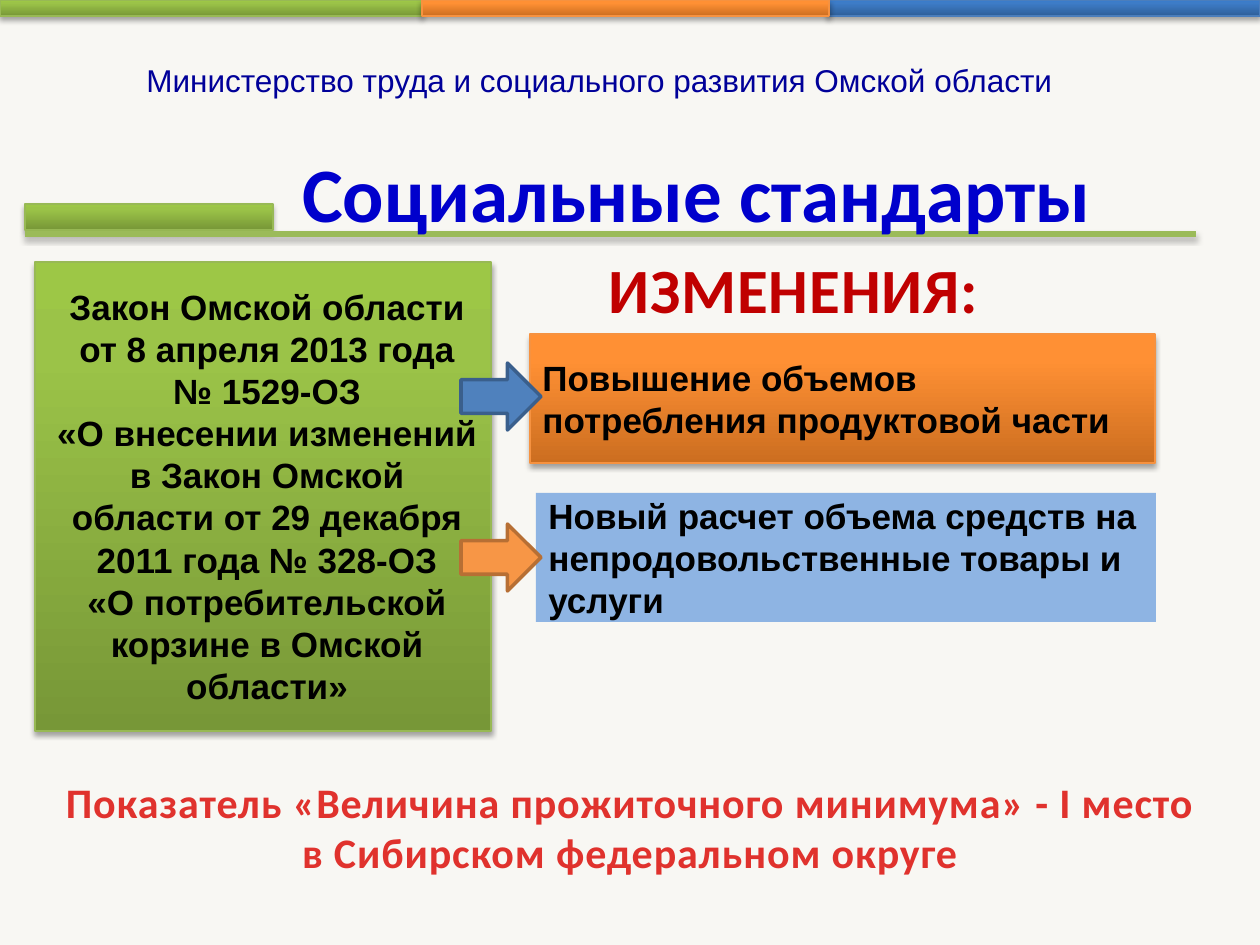
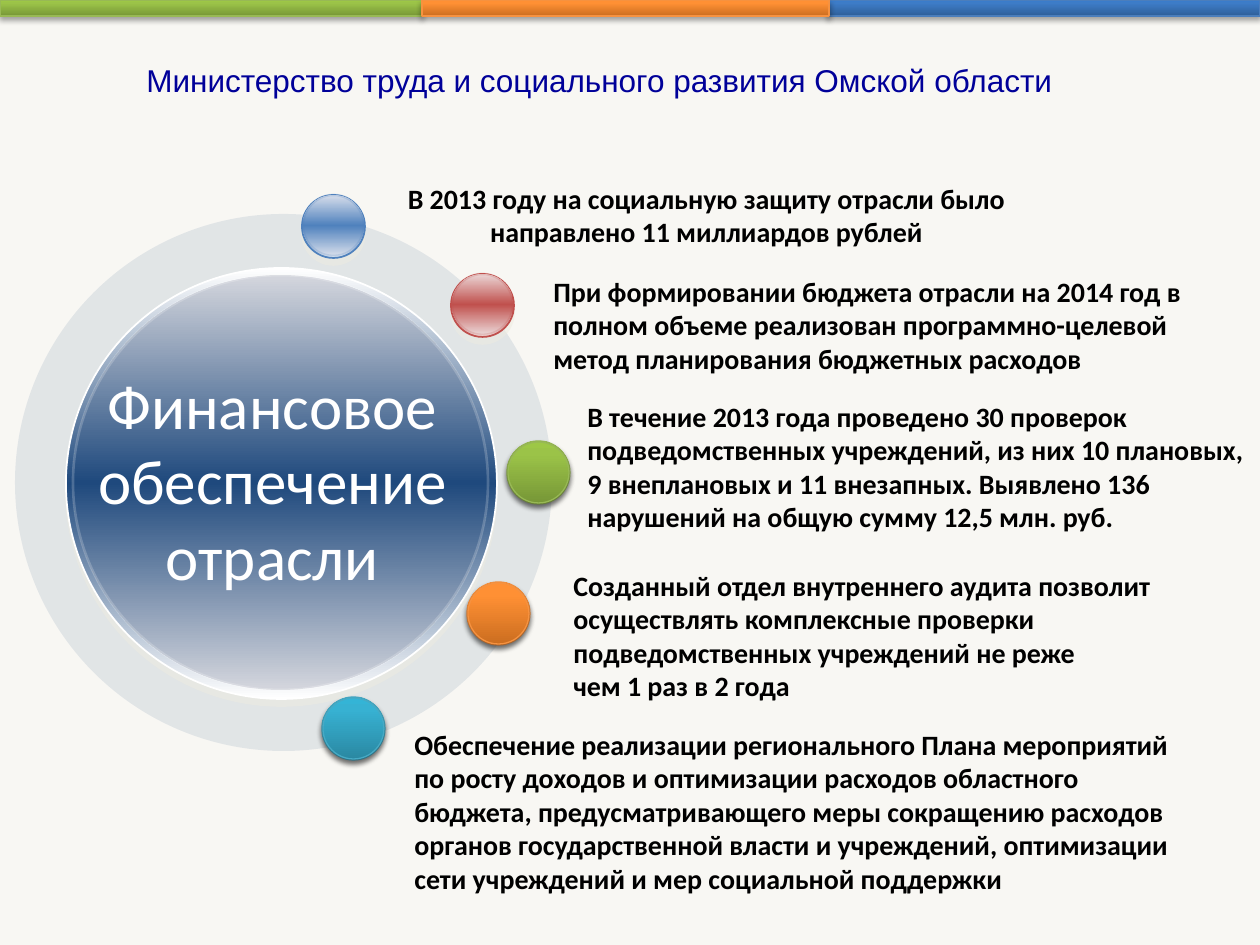
import lxml.etree
import pptx
import pptx.dml.color
import pptx.enum.shapes
import pptx.enum.text
import pptx.oxml.ns
import pptx.util

RGB = pptx.dml.color.RGBColor
SHAPE = pptx.enum.shapes.MSO_SHAPE
ALIGN = pptx.enum.text.PP_ALIGN
ANCHOR = pptx.enum.text.MSO_ANCHOR
qn = pptx.oxml.ns.qn

EMU_PER_PX = 914400 / 126
PAGE_W, PAGE_H = 1260, 945

PAPER = RGB(0xF8, 0xF7, 0xF3)
BLACK = RGB(0, 0, 0)
WHITE = RGB(0xFF, 0xFF, 0xFF)
SAND = RGB(0xEE, 0xEC, 0xE1)
HEADER_BLUE = RGB(0, 0, 0x99)
TITLE_BLUE = RGB(0, 0, 0xCC)
TITLE_EDGE = RGB(0x0F, 0x24, 0x3E)
DARK_RED = RGB(0xC0, 0, 0)
RULE_GREEN = RGB(0x9B, 0xBB, 0x59)
PALE_BLUE = RGB(0x8E, 0xB4, 0xE3)
NAVY = RGB(0x1F, 0x49, 0x7D)
NAVY_TINT = RGB(0xD4, 0xD6, 0xDD)
BLUE = RGB(0x4F, 0x81, 0xBD)
BLUE_EDGE = RGB(0x3A, 0x5F, 0x8C)
BLUE_LIGHT = RGB(0xF4, 0xF6, 0xF9)
BLUE_TINT = RGB(0xD7, 0xDE, 0xEB)
RED = RGB(0xC0, 0x50, 0x4D)
RED_LIGHT = RGB(0xFA, 0xF4, 0xF4)
RED_TINT = RGB(0xEB, 0xD7, 0xD7)
ORANGE = RGB(0xF7, 0x96, 0x46)
ORANGE_EDGE = RGB(0xB7, 0x6F, 0x34)

# Glossy styles: three gradient colours from the bottom up, then the outline
GLOSS_GREEN = (RGB(0x77, 0x97, 0x37), RGB(0x9B, 0xC3, 0x48),
               RGB(0x9D, 0xC7, 0x46), RGB(0x98, 0xB9, 0x55))
GLOSS_ORANGE = (RGB(0xCC, 0x6E, 0x20), RGB(0xFF, 0x90, 0x34),
                RGB(0xFF, 0x91, 0x36), RGB(0xF6, 0x92, 0x40))
GLOSS_BLUE = (RGB(0x2F, 0x5F, 0x99), RGB(0x3D, 0x7C, 0xC7),
              RGB(0x3A, 0x7C, 0xCB), RGB(0x4B, 0x7E, 0xBC))
GLOSS_TEAL = (RGB(0x2A, 0x88, 0xA2), RGB(0x37, 0xB1, 0xD2),
              RGB(0x34, 0xB4, 0xD6), RGB(0x46, 0xAA, 0xC5))
RED_FADE = ((25, RGB(0xE0, 0x32, 0x2D)), (100, RGB(0xA2, 0x20, 0x1C)))

SOFT_SHADOW = (BLACK, 35, 3.1, 1.8)
SAND_SHADOW = (SAND, 50, 0, 4)

MINISTRY = "Министерство труда и социального развития Омской области"


def px(*lengths):
    return [round(length * EMU_PER_PX) for length in lengths]


# XML details
def add_element(parent, tag, **attributes):
    element = lxml.etree.SubElement(parent, qn(tag))
    for name, value in attributes.items():
        element.set(name, str(value))
    return element


def add_color(parent, color, alpha=100):
    element = add_element(parent, "a:srgbClr", val=color)
    if alpha < 100:
        add_element(element, "a:alpha", val=alpha * 1000)


def set_alpha(parent, alpha):
    color = parent.find(qn("a:solidFill")).find(qn("a:srgbClr"))
    add_element(color, "a:alpha", val=alpha * 1000)


def add_shadow(effects, color, alpha, blur, distance):
    shadow = add_element(effects, "a:outerShdw", blurRad=pptx.util.Pt(blur),
                         dist=pptx.util.Pt(distance), dir=90 * 60000,
                         algn="ctr", rotWithShape=0)
    add_color(shadow, color, alpha)


def set_gradient(fill, parent, stops, angle):
    fill.gradient()
    fill.gradient_angle = angle
    stop_list = parent.find(qn("a:gradFill")).find(qn("a:gsLst"))
    for stop in list(stop_list):
        stop_list.remove(stop)
    for position, color in stops:
        add_color(add_element(stop_list, "a:gs", pos=position * 1000), color)


# Shapes
def add_shape(page, kind, place, fill=None, line=None, width=0.75, shadow=None):
    shape = page.shapes.add_shape(kind, *px(*place))
    shape.shadow.inherit = False
    if fill is not None:
        shape.fill.solid()
        shape.fill.fore_color.rgb = fill
    if line is None:
        shape.line.fill.background()
    else:
        shape.line.color.rgb = line
        shape.line.width = pptx.util.Pt(width)
    if shadow:
        effects = shape._element.spPr.find(qn("a:effectLst"))
        add_shadow(effects, *shadow)
    return shape


def add_glossy(page, kind, place, style):
    low, middle, high, edge = style
    shape = add_shape(page, kind, place, line=edge, shadow=SOFT_SHADOW)
    stops = ((0, low), (80, middle), (100, high))
    set_gradient(shape.fill, shape._element.spPr, stops, 90)
    return shape


def add_sphere(page, place, middle, ends, line, width, shadow=None):
    sphere = add_shape(page, SHAPE.OVAL, place, line=line, width=width, shadow=shadow)
    stops = ((0, ends), (50, middle), (100, ends))
    set_gradient(sphere.fill, sphere._element.spPr, stops, 270)
    return sphere


def add_glass_ball(page, outer, inner, middle, light, tint, line):
    add_sphere(page, outer, middle, light, line, 1, SAND_SHADOW)
    face = add_sphere(page, inner, middle, tint, line, 1.5)
    set_alpha(face._element.spPr.find(qn("a:ln")), 20)


def add_rule(page, left, right, y):
    rule = page.shapes.add_connector(
        pptx.enum.shapes.MSO_CONNECTOR.STRAIGHT, *px(left, y, right, y))
    rule.line.color.rgb = RULE_GREEN
    rule.line.width = pptx.util.Pt(3)
    add_shadow(add_element(rule._element.spPr, "a:effectLst"), *SOFT_SHADOW)


# Text
def write(box, paragraphs, size, font="Calibri", color=BLACK, bold=True,
          align=ALIGN.LEFT, anchor=ANCHOR.TOP):
    """Fill a box with equally styled paragraphs and return their runs."""
    frame = box.text_frame
    frame.word_wrap = True
    frame.vertical_anchor = anchor
    frame.text = "\n".join(paragraphs)
    spans = []
    for para in frame.paragraphs:
        para.alignment = align
        for span in para.runs:
            span.font.size = pptx.util.Pt(size)
            span.font.name = font
            span.font.bold = bold
            span.font.color.rgb = color
            spans.append(span)
    return spans


def add_text(page, place, paragraphs, size, **style):
    return write(page.shapes.add_textbox(*px(*place)), paragraphs, size, **style)


def set_spacing(span, points):
    span.font._element.set("spc", str(round(points * 100)))


def add_outline(span, color, width):
    line = lxml.etree.Element(qn("a:ln"), w=str(pptx.util.Pt(width)))
    add_color(add_element(line, "a:solidFill"), color)
    span.font._element.insert(0, line)


def add_text_shadow(span):
    effects = lxml.etree.Element(qn("a:effectLst"))
    add_shadow(effects, BLACK, 100, 0, 2)
    span.font._element.find(qn("a:solidFill")).addnext(effects)


# Shared page frame
def add_page(deck):
    page = deck.slides.add_slide(deck.slide_layouts[6])
    page.background.fill.solid()
    page.background.fill.fore_color.rgb = PAPER
    for left, width, style in ((0, 422, GLOSS_GREEN), (828, 432, GLOSS_BLUE),
                               (422, 407, GLOSS_ORANGE)):
        add_glossy(page, SHAPE.RECTANGLE, (left, 0, width, 16), style)
    add_text(page, (134, 55, 1091, 92), [MINISTRY], 18, font="Arial",
             color=HEADER_BLUE, bold=False)
    return page


def build_standards(deck):
    page = add_page(deck)

    # Title with its rule
    add_glossy(page, SHAPE.RECTANGLE, (25, 204, 248, 26), GLOSS_GREEN)
    add_rule(page, 25, 1196, 234)
    for span in add_text(page, (134, 139, 1126, 106), ["Социальные стандарты"], 44,
                         color=TITLE_BLUE, align=ALIGN.CENTER):
        add_outline(span, TITLE_EDGE, 0.75)

    # Law panel
    panel = add_glossy(page, SHAPE.PENTAGON, (35, 262, 456, 469), GLOSS_GREEN)
    panel.adjustments[0] = 0
    add_text(page, (44, 294, 446, 404), [
        "Закон Омской области от 8 апреля 2013 года № 1529-ОЗ",
        "«О внесении изменений в Закон Омской области от 29 декабря 2011 года № 328-ОЗ",
        "«О потребительской корзине в Омской области»",
    ], 20, font="Arial", align=ALIGN.CENTER, anchor=ANCHOR.MIDDLE)

    # Changes
    for span in add_text(page, (471, 244, 645, 89), ["ИЗМЕНЕНИЯ:"], 36,
                         color=DARK_RED, align=ALIGN.CENTER):
        set_spacing(span, 0.5)
    volumes = add_glossy(page, SHAPE.RECTANGLE, (530, 334, 625, 129), GLOSS_ORANGE)
    funds = add_shape(page, SHAPE.RECTANGLE, (536, 493, 620, 129), PALE_BLUE)
    for card, text in (
        (volumes, "Повышение объемов потребления продуктовой части"),
        (funds, "Новый расчет объема средств на непродовольственные товары и услуги"),
    ):
        write(card, [text], 20, font="Arial", anchor=ANCHOR.MIDDLE)

    # Conclusion
    for span in add_text(page, (0, 770, 1260, 115), [
        "Показатель «Величина прожиточного минимума» - I место",
        "в Сибирском федеральном округе",
    ], 24, align=ALIGN.CENTER):
        set_spacing(span, 0.5)
        set_gradient(span.font.fill, span.font._element, RED_FADE, 270)

    # Arrows from the law to the changes
    for top, fill, edge in ((363, BLUE, BLUE_EDGE), (524, ORANGE, ORANGE_EDGE)):
        add_shape(page, SHAPE.RIGHT_ARROW, (461, top, 80, 67), fill, edge, 2)


def build_financing(deck):
    page = add_page(deck)

    # Pale ring
    ring = add_shape(page, SHAPE.OVAL, (15, 214, 537, 537), NAVY)
    set_alpha(ring._element.spPr, 10)

    # Statements
    add_text(page, (343, 175, 727, 81), [
        "В 2013 году на социальную защиту отрасли было направлено 11 миллиардов рублей",
    ], 16, align=ALIGN.CENTER)
    for place, paragraphs in (
        ((541, 268, 683, 115), [
            "При формировании бюджета отрасли на 2014 год в полном объеме реализован "
            "программно-целевой метод планирования бюджетных расходов"]),
        ((575, 393, 690, 149), [
            "В течение 2013 года проведено 30 проверок подведомственных учреждений, "
            "из них 10 плановых, 9 внеплановых и 11 внезапных. Выявлено 136 нарушений "
            "на общую сумму 12,5 млн. руб."]),
        ((561, 562, 650, 149), [
            "Созданный отдел внутреннего аудита позволит осуществлять комплексные "
            "проверки подведомственных учреждений не реже",
            "чем 1 раз в 2 года"]),
        ((402, 721, 794, 183), [
            "Обеспечение реализации регионального Плана мероприятий по росту доходов и "
            "оптимизации расходов областного бюджета, предусматривающего меры сокращению "
            "расходов органов государственной власти и учреждений, оптимизации сети "
            "учреждений и мер социальной поддержки"]),
    ):
        add_text(page, place, paragraphs, 16)

    # Balls on the ring
    for left, top, colors in ((302, 195, (BLUE, BLUE_LIGHT, BLUE_TINT, BLUE)),
                              (451, 274, (RED, RED_LIGHT, RED_TINT, RED))):
        add_glass_ball(page, (left, top, 63, 63), (left + 1, top, 61, 61), *colors)
    for left, top, style in ((507, 441, GLOSS_GREEN), (467, 582, GLOSS_ORANGE),
                             (322, 697, GLOSS_TEAL)):
        for inset, size in ((0, 63), (1, 61)):
            add_glossy(page, SHAPE.OVAL, (left + inset, top + inset, size, size), style)

    # Central ball
    add_glass_ball(page, (66, 268, 431, 431), (73, 275, 415, 415),
                   NAVY, WHITE, NAVY_TINT, WHITE)
    for span in add_text(page, (84, 360, 377, 242), ["Финансовое обеспечение отрасли"],
                         36, color=WHITE, bold=False, align=ALIGN.CENTER):
        add_text_shadow(span)


def main():
    deck = pptx.Presentation()
    deck.slide_width, deck.slide_height = px(PAGE_W, PAGE_H)
    build_standards(deck)
    build_financing(deck)
    deck.save("out.pptx")


if __name__ == "__main__":
    main()
